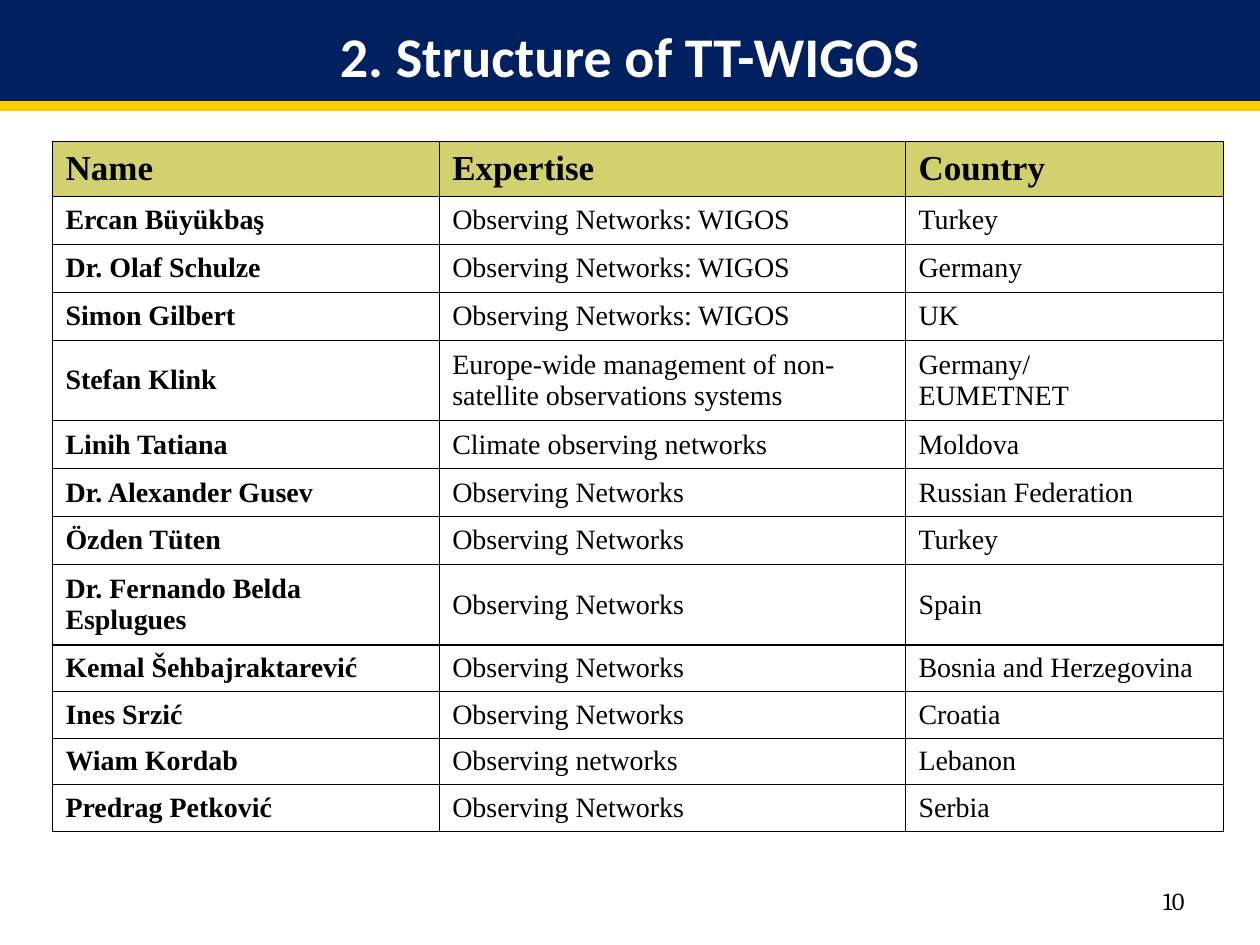
from dataclasses import dataclass

from lxml import etree
from pptx import Presentation
from pptx.dml.color import RGBColor
from pptx.enum.shapes import MSO_CONNECTOR
from pptx.enum.text import MSO_ANCHOR, PP_ALIGN
from pptx.oxml.ns import qn
from pptx.slide import Slide
from pptx.table import _Cell
from pptx.text.text import _Paragraph
from pptx.util import Inches, Pt

STRAIGHT = MSO_CONNECTOR.STRAIGHT
MIDDLE = MSO_ANCHOR.MIDDLE
CENTER, RIGHT = PP_ALIGN.CENTER, PP_ALIGN.RIGHT

COLORS = {"navy": "002060", "gold": "FFCC00", "olive": "D1D16F",
          "black": "000000", "white": "FFFFFF"}
TABLE_FONT = "Times New Roman"
COLUMN_WIDTHS = (3.07, 3.7, 2.52)
HEADINGS = ("Name", "Expertise", "Country")
HEADER_HEIGHT = 0.44
BORDER_WIDTH = Pt(0.75)


@dataclass(frozen=True)
class Member:
    name: str
    expertise: str
    country: str
    height: float = 0.38


MEMBERS = (
    Member("Ercan Büyükbaş", "Observing Networks: WIGOS", "Turkey"),
    Member("Dr. Olaf Schulze", "Observing Networks: WIGOS", "Germany"),
    Member("Simon Gilbert", "Observing Networks: WIGOS", "UK"),
    Member("Stefan Klink",
           "Europe-wide management of non-satellite observations systems",
           "Germany/\nEUMETNET", 0.64),
    Member("Linih Tatiana", "Climate observing networks", "Moldova"),
    Member("Dr. Alexander Gusev", "Observing Networks", "Russian Federation"),
    Member("Özden Tüten", "Observing Networks", "Turkey"),
    Member("Dr. Fernando Belda Esplugues", "Observing Networks", "Spain", 0.64),
    Member("Kemal Šehbajraktarević", "Observing Networks",
           "Bosnia and Herzegovina", 0.37),
    Member("Ines Srzić", "Observing Networks", "Croatia", 0.37),
    Member("Wiam Kordab", "Observing networks", "Lebanon", 0.37),
    Member("Predrag Petković", "Observing Networks", "Serbia", 0.37),
)


def color(name: str) -> RGBColor:
    return RGBColor.from_string(COLORS[name])


def add_run(para: _Paragraph, text: str, font: str, size: float,
            tint: str = "black", bold: bool = False) -> None:
    run = para.add_run()
    run.text = text
    run.font.name = font
    run.font.size = Pt(size)
    run.font.bold = bold
    run.font.color.rgb = color(tint)


def add_borders(cell: _Cell) -> None:
    properties = cell._tc.get_or_add_tcPr()
    for index, side in enumerate(("lnL", "lnR", "lnT", "lnB")):
        line = etree.Element(qn(f"a:{side}"), w=str(BORDER_WIDTH))
        fill = etree.SubElement(line, qn("a:solidFill"))
        etree.SubElement(fill, qn("a:srgbClr"), val=COLORS["black"])
        properties.insert(index, line)


def fill_cell(cell: _Cell, text: str, size: float, bold: bool,
              background: str | None = None) -> None:
    cell.vertical_anchor = MIDDLE
    if background:
        cell.fill.solid()
        cell.fill.fore_color.rgb = color(background)
    else:
        cell.fill.background()
    add_borders(cell)
    frame = cell.text_frame
    for index, line in enumerate(text.split("\n")):
        para = frame.add_paragraph() if index else frame.paragraphs[0]
        add_run(para, line, TABLE_FONT, size, bold=bold)


def add_member_table(slide: Slide) -> None:
    heights = [HEADER_HEIGHT] + [member.height for member in MEMBERS]
    frame = slide.shapes.add_table(
        len(heights), len(COLUMN_WIDTHS), Inches(0.42), Inches(1.12),
        Inches(sum(COLUMN_WIDTHS)), Inches(sum(heights)))
    table = frame.table
    table.first_row = table.horz_banding = False
    for column, width in zip(table.columns, COLUMN_WIDTHS):
        column.width = Inches(width)
    for row, height in zip(table.rows, heights):
        row.height = Inches(height)
    for column, heading in enumerate(HEADINGS):
        fill_cell(table.cell(0, column), heading, 20, True, "olive")
    for row, member in enumerate(MEMBERS, start=1):
        values = (member.name, member.expertise, member.country)
        for column, value in enumerate(values):
            fill_cell(table.cell(row, column), value, 16, column == 0)


def add_title_band(slide: Slide) -> None:
    title = slide.shapes.title
    title.left, title.top = Inches(0), Inches(0)
    title.width, title.height = Inches(10), Inches(0.87)
    title.fill.solid()
    title.fill.fore_color.rgb = color("navy")
    title.text_frame.vertical_anchor = MIDDLE
    para = title.text_frame.paragraphs[0]
    para.alignment = CENTER
    add_run(para, "2. Structure of TT-WIGOS", "Calibri", 32, "white", True)

    rule = slide.shapes.add_connector(
        STRAIGHT, Inches(0), Inches(0.84), Inches(10), Inches(0.84))
    rule.line.color.rgb = color("gold")
    rule.line.width = Pt(6)
    etree.SubElement(rule._element.spPr, qn("a:effectLst"))


def add_page_number(slide: Slide) -> None:
    box = slide.shapes.add_textbox(
        Inches(7.17), Inches(6.95), Inches(2.33), Inches(0.4))
    box.text_frame.word_wrap = True
    box.text_frame.vertical_anchor = MIDDLE
    para = box.text_frame.paragraphs[0]
    para.alignment = RIGHT
    add_run(para, "10", "Cambria", 14)


def main() -> None:
    deck = Presentation()
    deck.slide_width, deck.slide_height = Inches(10), Inches(7.5)
    slide = deck.slides.add_slide(deck.slide_layouts.get_by_name("Title Only"))
    add_page_number(slide)
    add_member_table(slide)
    add_title_band(slide)
    deck.save("out.pptx")


if __name__ == "__main__":
    main()
